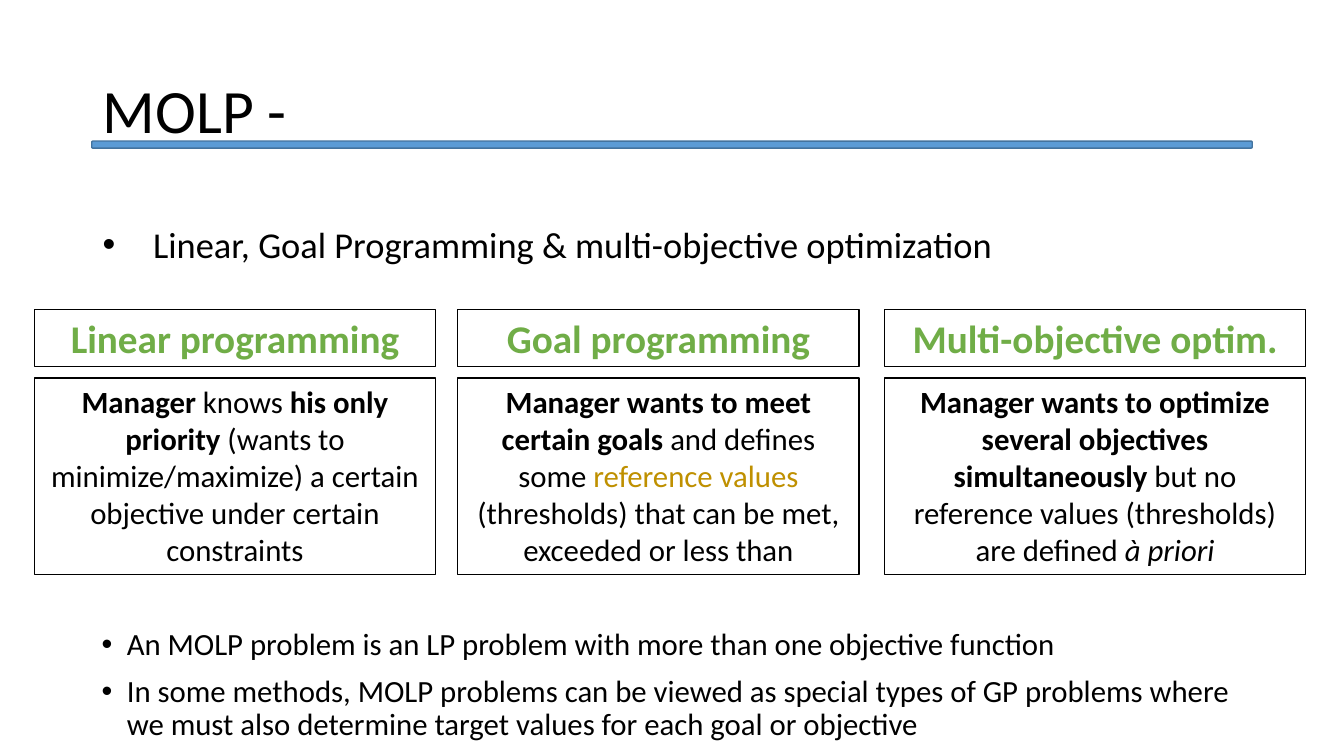
import pptx
import pptx.dml.color
import pptx.enum.shapes
import pptx.enum.text
import pptx.oxml.ns
import pptx.util
import lxml.etree

PX = 9144
FONT = "Calibri"
BLACK = "000000"
GREEN = "70AD47"
GOLD = "BF9000"
ALIGN = pptx.enum.text.PP_ALIGN
ANCHOR = pptx.enum.text.MSO_ANCHOR
SHAPES = pptx.enum.shapes.MSO_SHAPE

COLUMNS = [
    (34, 398, "Linear programming", [
        ("Manager ", True, False, BLACK),
        ("knows", False, False, BLACK),
        (" his only priority ", True, False, BLACK),
        ("(wants to minimize/maximize) a certain objective under certain constraints",
         False, False, BLACK),
    ]),
    (454, 398, "Goal programming", [
        ("Manager wants to meet certain goals ", True, False, BLACK),
        ("and defines some ", False, False, BLACK),
        ("reference values ", False, False, GOLD),
        ("(thresholds) that can be met, exceeded or less than", False, False, BLACK),
    ]),
    (877, 418, "Multi-objective optim.", [
        ("Manager wants to optimize several objectives simultaneously ", True, False, BLACK),
        ("but no reference values (thresholds) are defined ", False, False, BLACK),
        ("à priori", False, True, BLACK),
    ]),
]
REMARKS = [
    "An MOLP problem is an LP problem with more than one objective function",
    "In some methods, MOLP problems can be viewed as special types of GP problems "
    "where we must also determine target values for each goal or objective",
]


def color(value):
    return pptx.dml.color.RGBColor.from_string(value)


def to_emu(*lengths):
    return [pptx.util.Emu(length * PX) for length in lengths]


def add_runs(paragraph, runs, size):
    for text, bold, italic, hue in runs:
        run = paragraph.add_run()
        run.text = text
        run.font.name = FONT
        run.font.size = pptx.util.Pt(size)
        run.font.bold = bold
        run.font.italic = italic
        run.font.color.rgb = color(hue)


def add_bullet(paragraph, indent):
    properties = paragraph._p.get_or_add_pPr()
    properties.set("marL", str(indent * PX))
    properties.set("indent", str(-indent * PX))
    bullet_font = lxml.etree.SubElement(properties, pptx.oxml.ns.qn("a:buFont"))
    bullet_font.set("typeface", "Arial")
    bullet = lxml.etree.SubElement(properties, pptx.oxml.ns.qn("a:buChar"))
    bullet.set("char", "•")


def add_box(slide, kind, box, line, width, fill=None):
    shape = slide.shapes.add_shape(kind, *to_emu(*box))
    shape.shadow.inherit = False
    if fill:
        shape.fill.solid()
        shape.fill.fore_color.rgb = color(fill)
    else:
        shape.fill.background()
    shape.line.color.rgb = color(line)
    shape.line.width = pptx.util.Pt(width)
    return shape


def add_framed_text(slide, box, runs, size):
    shape = add_box(slide, SHAPES.RECTANGLE, box, BLACK, 0.75)
    text_frame = shape.text_frame
    text_frame.word_wrap = True
    text_frame.vertical_anchor = ANCHOR.TOP
    paragraph = text_frame.paragraphs[0]
    paragraph.alignment = ALIGN.CENTER
    add_runs(paragraph, runs, size)


def add_column(slide, left, top, width, heading, runs):
    add_framed_text(slide, (left, top, width, 57), [(heading, True, False, GREEN)], 28)
    add_framed_text(slide, (left, top + 68, width, 195), runs, 22)


def add_bullets(slide, box, texts, size, indent, line_spacing=1.0, space_before=0):
    text_frame = slide.shapes.add_textbox(*to_emu(*box)).text_frame
    text_frame.word_wrap = True
    for index, text in enumerate(texts):
        paragraph = text_frame.add_paragraph() if index else text_frame.paragraphs[0]
        paragraph.line_spacing = line_spacing
        paragraph.space_before = pptx.util.Pt(space_before)
        add_bullet(paragraph, indent)
        add_runs(paragraph, [(text, False, False, BLACK)], size)


def add_title(slide, left, top, width, height):
    title = slide.shapes.title
    title.left, title.top, title.width, title.height = to_emu(left, top, width, height)
    text_frame = title.text_frame
    text_frame.auto_size = pptx.enum.text.MSO_AUTO_SIZE.NONE
    text_frame.vertical_anchor = ANCHOR.MIDDLE
    paragraph = text_frame.paragraphs[0]
    paragraph.alignment = ALIGN.LEFT
    paragraph.line_spacing = 0.9
    add_runs(paragraph, [("MOLP -", False, False, BLACK)], 44)
    add_box(slide, SHAPES.ROUNDED_RECTANGLE, (left - 1, top + 100, width + 1, 7),
            "43739E", 1, "5B9BD5")


def main():
    presentation = pptx.Presentation()
    presentation.slide_width, presentation.slide_height = to_emu(1333, 750)
    slide = presentation.slides.add_slide(presentation.slide_layouts[5])
    add_title(slide, 92, 40, 1150, 145)
    add_bullets(slide, (92, 215, 969, 54),
                ["Linear, Goal Programming & multi-objective optimization"], 26, 50)
    for left, width, heading, runs in COLUMNS:
        add_column(slide, left, 307, width, heading, runs)
    add_bullets(slide, (91, 619, 1150, 124), REMARKS, 22, 25, 0.9, 10)
    presentation.save("out.pptx")


if __name__ == "__main__":
    main()
